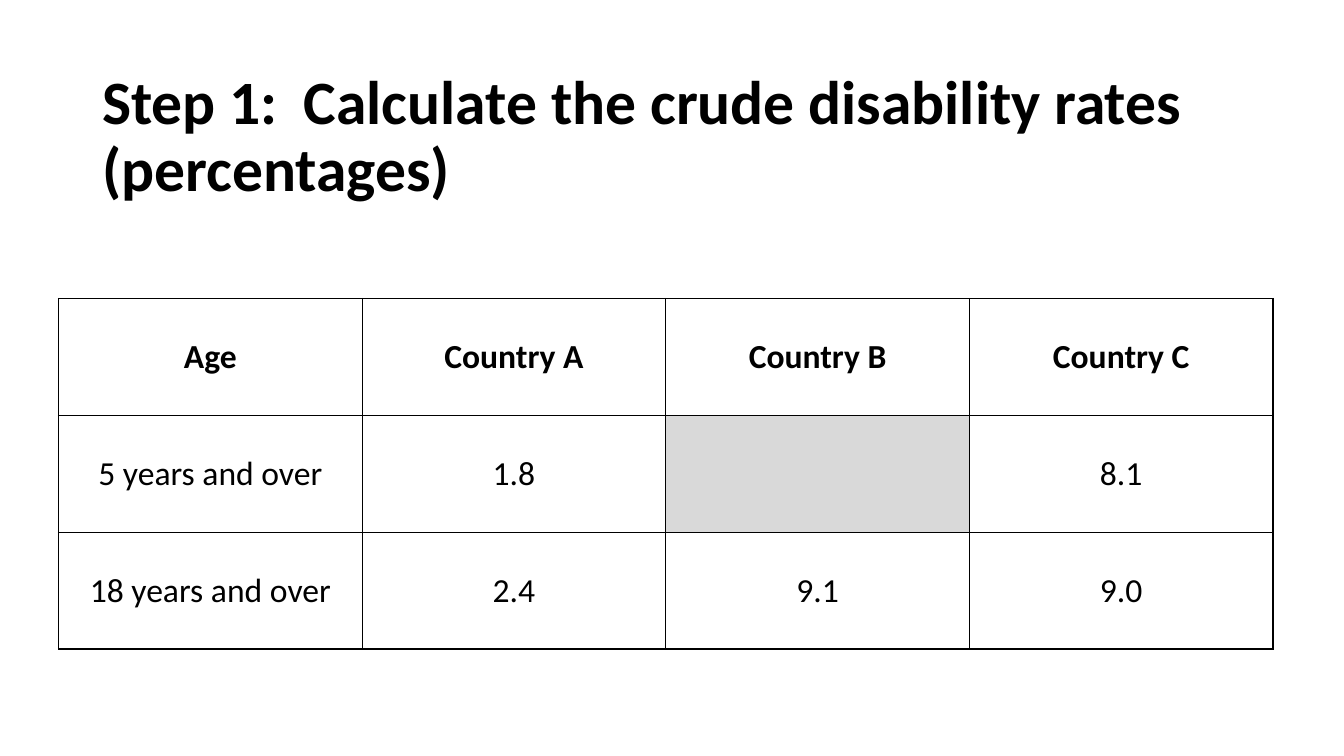
from lxml.etree import SubElement
from pptx import Presentation
from pptx.dml.color import RGBColor
from pptx.enum.text import MSO_ANCHOR as Anchor, PP_ALIGN as Align
from pptx.oxml.ns import qn
from pptx.util import Pt

BLACK = RGBColor(0x00, 0x00, 0x00)
GREY = RGBColor(0xD9, 0xD9, 0xD9)
FONT = "Calibri"

RATES = [
    ("Age", "Country A", "Country B", "Country C"),
    ("5 years and over", "1.8", "", "8.1"),
    ("18 years and over", "2.4", "9.1", "9.0"),
]


def style_font(paragraph, size, bold):
    font = paragraph.font
    font.name, font.size, font.bold = FONT, Pt(size), bold
    font.color.rgb = BLACK


def add_heading(slide, left, top, width, height):
    heading = slide.shapes.add_textbox(Pt(left), Pt(top), Pt(width), Pt(height))
    frame = heading.text_frame
    frame.word_wrap = True
    frame.vertical_anchor = Anchor.MIDDLE
    line = frame.paragraphs[0]
    line.text = "Step 1: \tCalculate the crude disability rates (percentages)"
    line.line_spacing = 0.9
    style_font(line, 44, True)


def add_borders(cell, width):
    """Draw black lines on all four sides; they must precede the cell fill."""
    properties = cell._tc.get_or_add_tcPr()
    for side in ("a:lnL", "a:lnR", "a:lnT", "a:lnB"):
        border = SubElement(properties, qn(side), w=str(Pt(width)))
        fill = SubElement(border, qn("a:solidFill"))
        SubElement(fill, qn("a:srgbClr"), val=str(BLACK))


def fill_cell(cell, text, bold):
    add_borders(cell, 1)
    cell.vertical_anchor = Anchor.MIDDLE
    cell.margin_left = cell.margin_right = cell.margin_top = Pt(0.75)
    cell.margin_bottom = 0
    # Rates that are not available are greyed out
    if text:
        cell.fill.background()
    else:
        cell.fill.solid()
        cell.fill.fore_color.rgb = GREY
    entry = cell.text_frame.paragraphs[0]
    entry.text = text
    entry.alignment = Align.CENTER
    style_font(entry, 24, bold)


def add_rates_table(slide, left, top, width, height):
    table = slide.shapes.add_table(
        len(RATES), len(RATES[0]), Pt(left), Pt(top), Pt(width), Pt(height)
    ).table
    table.horz_banding = False
    for r, row in enumerate(RATES):
        for c, text in enumerate(row):
            fill_cell(table.cell(r, c), text, bold=r == 0)


def main():
    deck = Presentation()
    deck.slide_width, deck.slide_height = Pt(960), Pt(540)
    slide = deck.slides.add_slide(deck.slide_layouts[6])
    add_heading(slide, 66, 46.5, 828, 104.5)
    add_rates_table(slide, 41.8, 213.2, 867.6, 250.5)
    deck.save("out.pptx")


if __name__ == "__main__":
    main()
